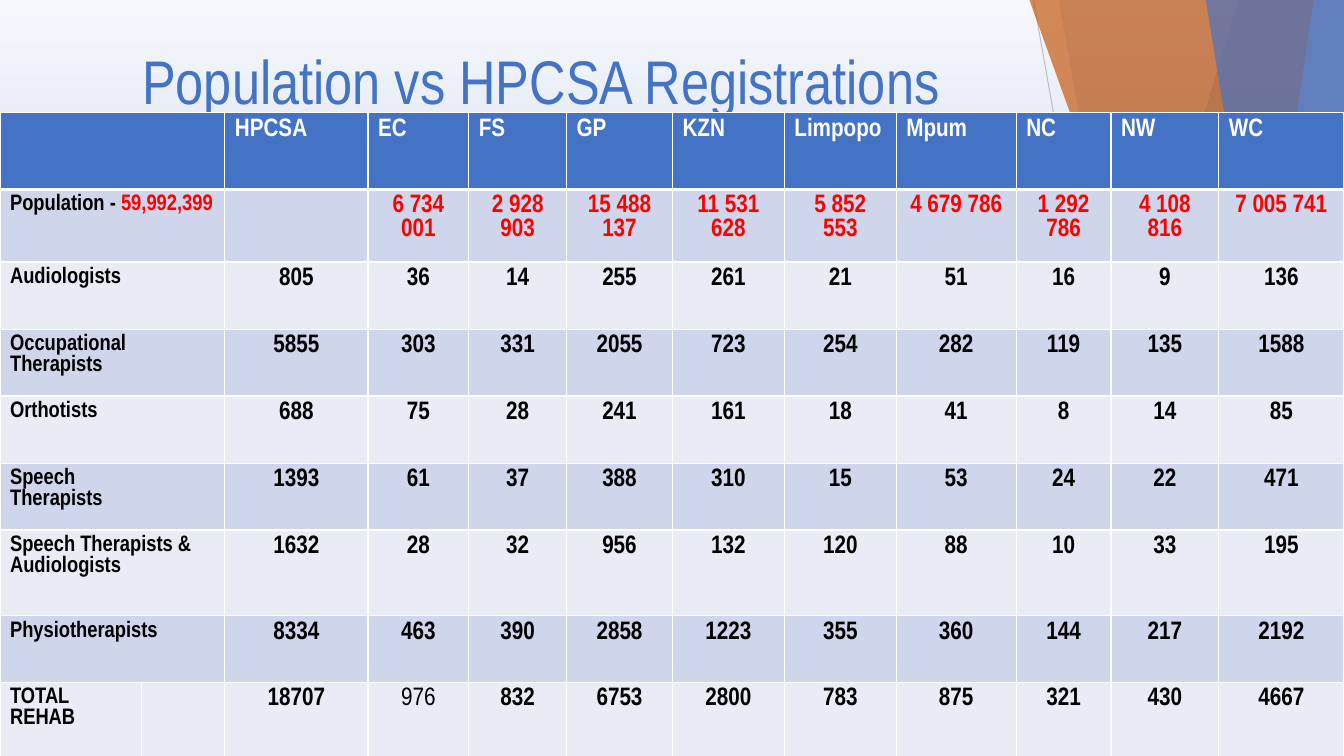
from dataclasses import dataclass

from lxml import etree
from pptx import Presentation
from pptx import util as u
from pptx.dml.color import RGBColor
from pptx.enum import shapes, text
from pptx.oxml.ns import qn

PX = 9144  # 100 px to the inch
WIDE, HIGH = 1333, 750


@dataclass(frozen=True)
class Theme:
    font: str = "Arial Narrow"
    blue: str = "4472C4"
    rust: str = "C55A11"
    sky: str = "8FAADC"
    red: str = "FF0000"
    black: str = "000000"
    white: str = "FFFFFF"
    gray: str = "BFBFBF"
    bands: tuple = ("CFD5EA", "E9EBF5")
    back: tuple = ((0, "F6F8FC"), (74, "ABC0E4"), (83, "ABC0E4"), (100, "C7D5ED"))
    title: int = 44
    body: int = 18
    label: int = 16


COLS = [140, 83, 142, 100, 97, 105, 111, 111, 119, 94, 107, 124]
ROWS = [76, 72, 67, 66, 67, 66, 85, 66, 75]
HEADS = ["HPCSA", "EC", "FS", "GP", "KZN", "Limpopo", "Mpum", "NC", "NW", "WC"]
PEOPLE = ["", "6 734 001", "2 928 903", "15 488 137", "11 531 628", "5 852 553",
          "4 679 786", "1 292 786", "4 108 816", "7 005 741"]
STAFF = {
    "Audiologists": [805, 36, 14, 255, 261, 21, 51, 16, 9, 136],
    "Occupational Therapists": [5855, 303, 331, 2055, 723, 254, 282, 119, 135, 1588],
    "Orthotists": [688, 75, 28, 241, 161, 18, 41, 8, 14, 85],
    "Speech\nTherapists": [1393, 61, 37, 388, 310, 15, 53, 24, 22, 471],
    "Speech Therapists &\nAudiologists": [1632, 28, 32, 956, 132, 120, 88, 10, 33, 195],
    "Physiotherapists": [8334, 463, 390, 2858, 1223, 355, 360, 144, 217, 2192],
    "TOTAL REHAB": [18707, 976, 832, 6753, 2800, 783, 875, 321, 430, 4667],
}


def write(frame, words, *, font, size, color, bold=True, center=False, more=False):
    """Fill a text frame, one paragraph a line; more adds to the last paragraph."""
    for i, line in enumerate(words.split("\n")):
        para = frame.add_paragraph() if i else frame.paragraphs[-1 if more else 0]
        para.alignment = text.PP_ALIGN.CENTER if center else text.PP_ALIGN.LEFT
        run = para.add_run()
        run.text = line
        run.font.name = font
        run.font.size = u.Pt(size)
        run.font.bold = bold
        run.font.color.rgb = RGBColor.from_string(color)


def paint(fill, color, alpha=100):
    fill.solid()
    fill.fore_color.rgb = RGBColor.from_string(color)
    return alpha


def tint(parent, color):
    """Add a solid colour element below parent."""
    return etree.SubElement(parent, qn("a:srgbClr"), val=color)


class Deck:
    def __init__(self, theme):
        self.theme = theme
        self.show = Presentation()
        self.show.slide_width = WIDE * PX
        self.show.slide_height = HIGH * PX
        self.slide = self.show.slides.add_slide(self.show.slide_layouts[5])

    def back(self):
        fill = self.slide.background.fill
        fill.gradient()
        fill.gradient_angle = 270
        stops = self.slide.element.find(".//" + qn("a:gsLst"))
        for stop in list(stops):
            stops.remove(stop)
        for place, color in self.theme.back:
            tint(etree.SubElement(stops, qn("a:gs"), pos=str(place * 1000)), color)

    def title(self, words, x, y, w, h):
        box = self.slide.shapes.title
        box.left, box.top, box.width, box.height = (n * PX for n in (x, y, w, h))
        frame = box.text_frame
        frame.word_wrap = True
        frame.auto_size = text.MSO_AUTO_SIZE.NONE
        frame.vertical_anchor = text.MSO_ANCHOR.MIDDLE
        write(frame, words, font=self.theme.font, size=self.theme.title,
              color=self.theme.blue, bold=False, center=True)

    def line(self, x1, y1, x2, y2):
        line = self.slide.shapes.add_connector(
            shapes.MSO_CONNECTOR.STRAIGHT, *(n * PX for n in (x1, y1, x2, y2)))
        line.line.width = u.Pt(0.75)
        line.line.color.rgb = RGBColor.from_string(self.theme.gray)
        etree.SubElement(line.element.spPr, qn("a:effectLst"))

    def panel(self, top, foot, color, alpha):
        """Draw a see-through panel from a slanted left edge to the slide's right edge."""
        pen = self.slide.shapes.build_freeform(top, 0, scale=PX)
        pen.add_line_segments([(WIDE, 0), (WIDE, HIGH), (foot, HIGH)], close=True)
        shape = pen.convert_to_shape()
        shape.shadow.inherit = False
        shape.line.fill.background()
        paint(shape.fill, color)
        shade = shape.element.spPr.find(qn("a:solidFill"))[0]
        etree.SubElement(shade, qn("a:alpha"), val=str(alpha * 1000))

    def grid(self, x, y, cols, rows):
        frame = self.slide.shapes.add_table(
            len(rows), len(cols), x * PX, y * PX, sum(cols) * PX, sum(rows) * PX)
        grid = frame.table
        for col, w in zip(grid.columns, cols):
            col.width = w * PX
        for row, h in zip(grid.rows, rows):
            row.height = h * PX
        for r in range(len(rows)):
            fill = self.theme.bands[(r + 1) % 2] if r else self.theme.blue
            for c in range(len(cols)):
                cell = grid.cell(r, c)
                self.edge(cell, foot=1 if r else 3, head=3 if r == 1 else 1)
                paint(cell.fill, fill)
        return grid

    def edge(self, cell, foot, head):
        """Give a cell white borders, widths in points."""
        props = cell._tc.get_or_add_tcPr()
        for side, width in zip("LRTB", (1, 1, head, foot)):
            line = etree.SubElement(props, qn("a:ln" + side), w=str(u.Pt(width)))
            tint(etree.SubElement(line, qn("a:solidFill")), self.theme.white)

    def cell(self, cell, words, **form):
        look = dict(font=self.theme.font, size=self.theme.body, color=self.theme.black)
        write(cell.text_frame, str(words), **{**look, **form})


def main():
    theme = Theme()
    deck = Deck(theme)
    deck.back()
    deck.line(1025, 0, 1158, HIGH)
    for top, foot, color, alpha in (
            (1228, 1004, theme.blue, 30), (1050, 1183, theme.blue, 20),
            (1021, 1291, theme.rust, 70), (1303, 1192, theme.sky, 70),
            (1196, 1318, theme.blue, 65)):
        deck.panel(top, foot, color, alpha)
    deck.title("Population vs HPCSA Registrations", 73, 31, 928, 97)

    grid = deck.grid(0, 112, COLS, ROWS)
    last = len(ROWS) - 1
    for r in range(last):
        grid.cell(r, 0).merge(grid.cell(r, 1))
    for c, head in enumerate(HEADS, 2):
        deck.cell(grid.cell(0, c), head, color=theme.white)

    people = grid.cell(1, 0)
    deck.cell(people, "Population - ", size=theme.label)
    deck.cell(people, "59,992,399", size=theme.label, color=theme.red, more=True)
    for c, count in enumerate(PEOPLE, 2):
        if count:
            deck.cell(grid.cell(1, c), count, color=theme.red, center=True)

    for r, (job, counts) in enumerate(STAFF.items(), 2):
        deck.cell(grid.cell(r, 0), job, size=theme.label)
        for c, count in enumerate(counts, 2):
            plain = (r, c) == (last, 3)
            deck.cell(grid.cell(r, c), count, bold=not plain, center=True)
    deck.show.save("out.pptx")


if __name__ == "__main__":
    main()
